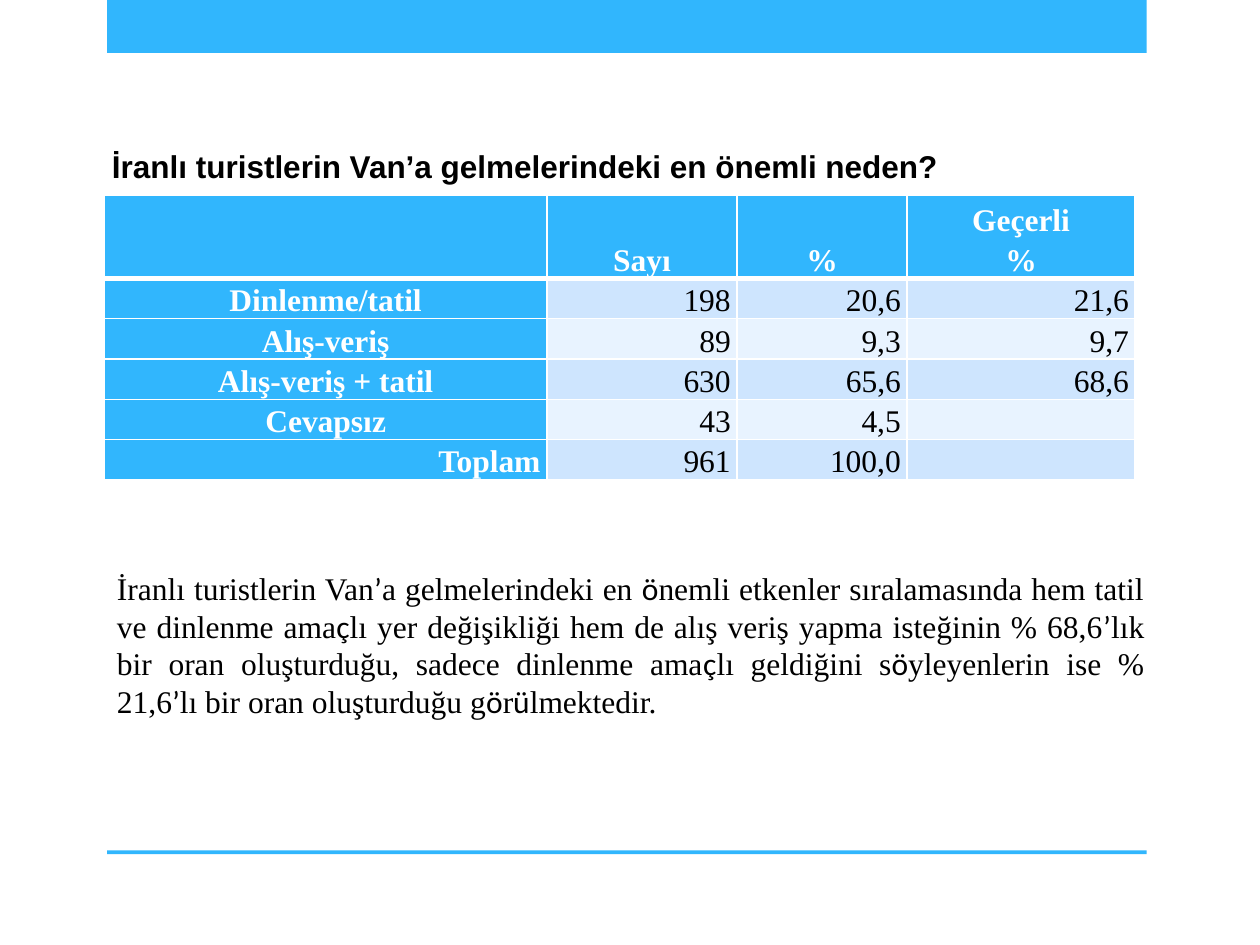
from dataclasses import dataclass
from itertools import groupby

from lxml import etree
from pptx import Presentation
from pptx.dml.color import RGBColor
from pptx.enum.shapes import MSO_SHAPE
from pptx.enum.text import MSO_ANCHOR, PP_ALIGN
from pptx.oxml.ns import qn
from pptx.util import Inches, Pt

RECT = MSO_SHAPE.RECTANGLE
TOP, MIDDLE, BOTTOM = MSO_ANCHOR.TOP, MSO_ANCHOR.MIDDLE, MSO_ANCHOR.BOTTOM
CENTER, RIGHT, JUSTIFY = PP_ALIGN.CENTER, PP_ALIGN.RIGHT, PP_ALIGN.JUSTIFY


@dataclass(frozen=True)
class Theme:
    blue: str = "31B6FD"
    bands: tuple = ("CEE5FE", "E8F3FF")
    white: str = "FFFFFF"
    black: str = "000000"
    serif: str = "Times New Roman"
    sans: str = "Arial"
    accent: str = "Calibri"
    size: int = 18
    thin: int = 1
    thick: int = 3
    spacing: float = 1.15


class Deck:
    def __init__(self, theme, slide):
        self.theme, self.slide = theme, slide

    def bar(self, left, top, width, height):
        shape = self.slide.shapes.add_shape(
            RECT, Inches(left), Inches(top), Inches(width), Inches(height))
        shape.shadow.inherit = False
        shape.fill.solid()
        shape.fill.fore_color.rgb = RGBColor.from_string(self.theme.blue)
        shape.line.fill.background()

    def run(self, para, text, face, color, bold=False):
        run = para.add_run()
        run.text = text
        font = run.font
        font.name, font.size, font.bold = face, Pt(self.theme.size), bold
        font.color.rgb = RGBColor.from_string(color)

    def text(self, left, top, width, height, runs, anchor=TOP, bold=False):
        box = self.slide.shapes.add_textbox(
            Inches(left), Inches(top), Inches(width), Inches(height))
        frame = box.text_frame
        frame.word_wrap = True
        frame.vertical_anchor = anchor
        para = frame.paragraphs[0]
        para.alignment = JUSTIFY
        for text, face in runs:
            self.run(para, text, face, self.theme.black, bold)

    def border(self, cell, widths):
        props = cell._tc.get_or_add_tcPr()
        for spot, (side, width) in enumerate(zip("LRTB", widths)):
            line = etree.Element(qn(f"a:ln{side}"), w=str(Pt(width)))
            fill = etree.SubElement(line, qn("a:solidFill"))
            etree.SubElement(fill, qn("a:srgbClr"), val=self.theme.white)
            props.insert(spot, line)

    def cell(self, cell, text, fill, color, align, anchor, bold):
        cell.margin_left = cell.margin_right = Inches(0.05)
        cell.margin_top = cell.margin_bottom = 0
        cell.vertical_anchor = anchor
        cell.fill.solid()
        cell.fill.fore_color.rgb = RGBColor.from_string(fill)
        frame = cell.text_frame
        for num, part in enumerate(text.split("\n")):
            para = frame.add_paragraph() if num else frame.paragraphs[0]
            para.alignment = align
            para.line_spacing = self.theme.spacing
            para.font.size = Pt(self.theme.size)
            if part:
                self.run(para, part, self.theme.serif, color, bold)

    def table(self, left, top, cols, rows, data):
        look = self.theme
        table = self.slide.shapes.add_table(
            len(rows), len(cols), Inches(left), Inches(top),
            Inches(sum(cols)), Inches(sum(rows))).table
        for col, width in zip(table.columns, cols):
            col.width = Inches(width)
        for row, height in zip(table.rows, rows):
            row.height = Inches(height)
        last = len(rows) - 1
        for r, line in enumerate(data):
            for c, text in enumerate(line):
                cell = table.cell(r, c)
                head = r == 0 or c == 0
                total = r == last and c == 0
                self.cell(
                    cell, text,
                    fill=look.blue if head else look.bands[(r - 1) % 2],
                    color=look.white if head else look.black,
                    align=CENTER if head and not total else RIGHT,
                    anchor=BOTTOM if r == 0 else TOP,
                    bold=head)
                # The heavy rule lies between header and body
                self.border(cell, (look.thin, look.thin,
                                   look.thick if r == 1 else look.thin,
                                   look.thick if r == 0 else look.thin))


QUESTION = "İranlı turistlerin Van’a gelmelerindeki en önemli neden?"
DATA = [
    ("", "Sayı", "%", "Geçerli\n%"),
    ("Dinlenme/tatil", "198", "20,6", "21,6"),
    ("Alış-veriş", "89", "9,3", "9,7"),
    ("Alış-veriş + tatil", "630", "65,6", "68,6"),
    ("Cevapsız", "43", "4,5", ""),
    ("Toplam", "961", "100,0", ""),
]
FINDING = (
    "İranlı turistlerin Van’a gelmelerindeki en önemli etkenler sıralamasında "
    "hem tatil ve dinlenme amaçlı yer değişikliği hem de alış veriş yapma "
    "isteğinin % 68,6’lık bir oran oluşturduğu, sadece dinlenme amaçlı "
    "geldiğini söyleyenlerin ise % 21,6’lı bir oran oluşturduğu "
    "görülmektedir."
)


def main():
    prs = Presentation()
    prs.slide_width, prs.slide_height = Inches(10), Inches(7.5)
    theme = Theme()
    deck = Deck(theme, prs.slides.add_slide(prs.slide_layouts[6]))

    # Top band and bottom rule
    for top, height in ((0, 0.42), (6.75, 0.03)):
        deck.bar(0.85, top, 8.25, height)

    # Survey results
    deck.table(0.83, 1.55, (3.51, 1.51, 1.35, 1.81),
               [0.66] + [0.32] * 5, DATA)

    # Finding, with its special letters in the accent face
    runs = [("".join(part), theme.accent if special else theme.serif)
            for special, part in groupby(FINDING, lambda ch: ch in "’öçü")]
    deck.text(0.83, 4.46, 8.35, 1.31, runs, anchor=MIDDLE)

    # Survey question
    deck.text(0.79, 1.12, 7.23, 0.4, [(QUESTION, theme.sans)], bold=True)

    prs.save("out.pptx")


if __name__ == "__main__":
    main()
